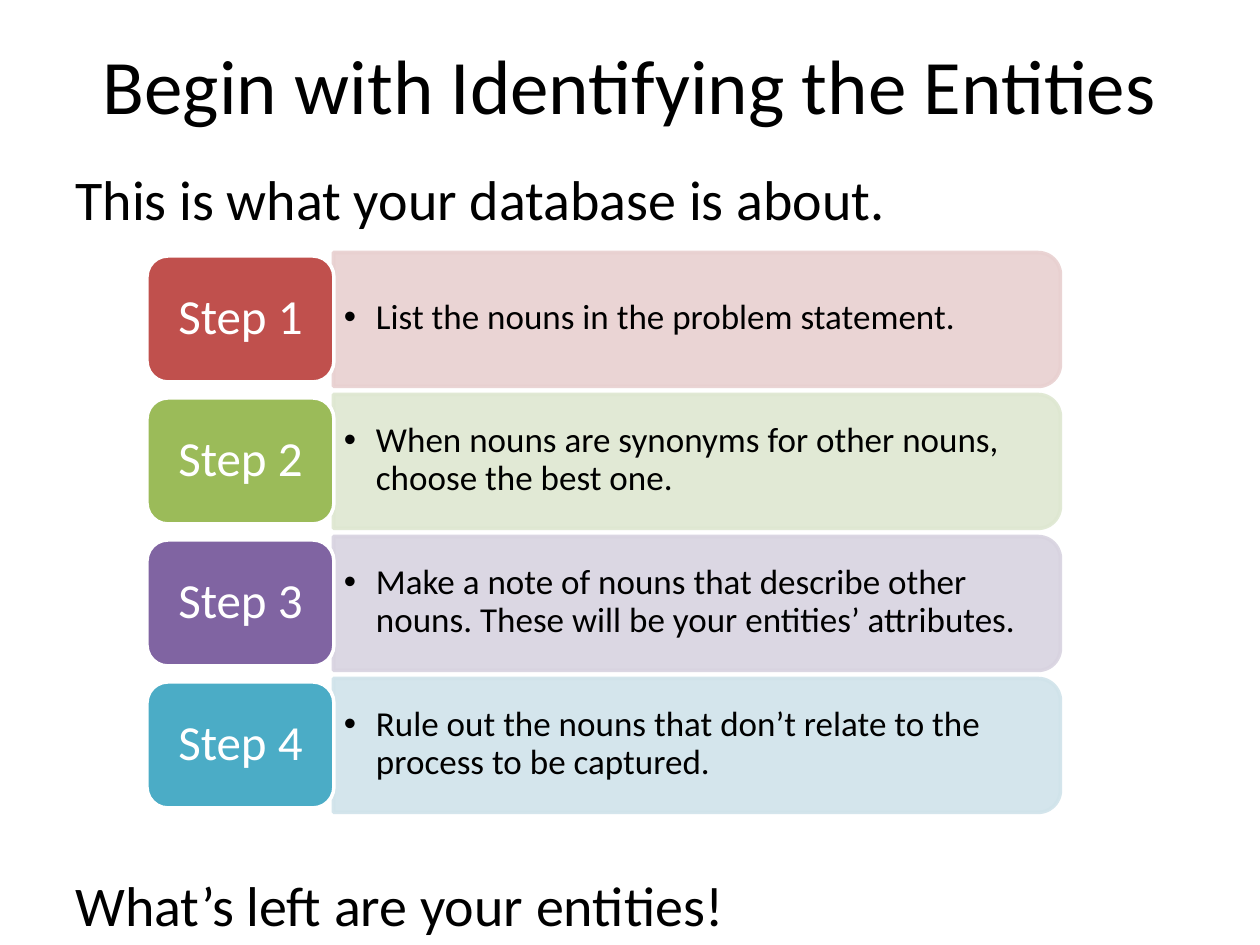
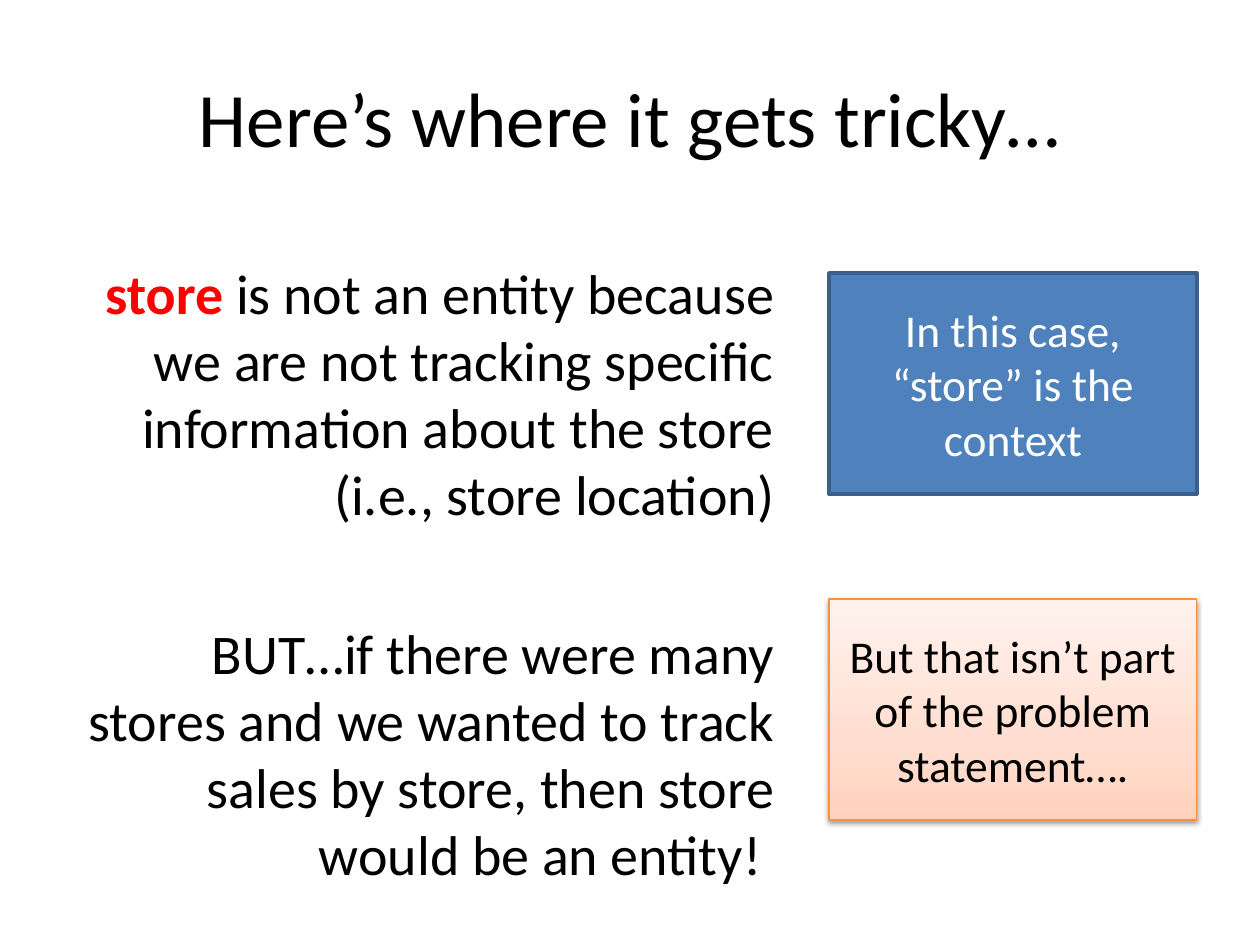
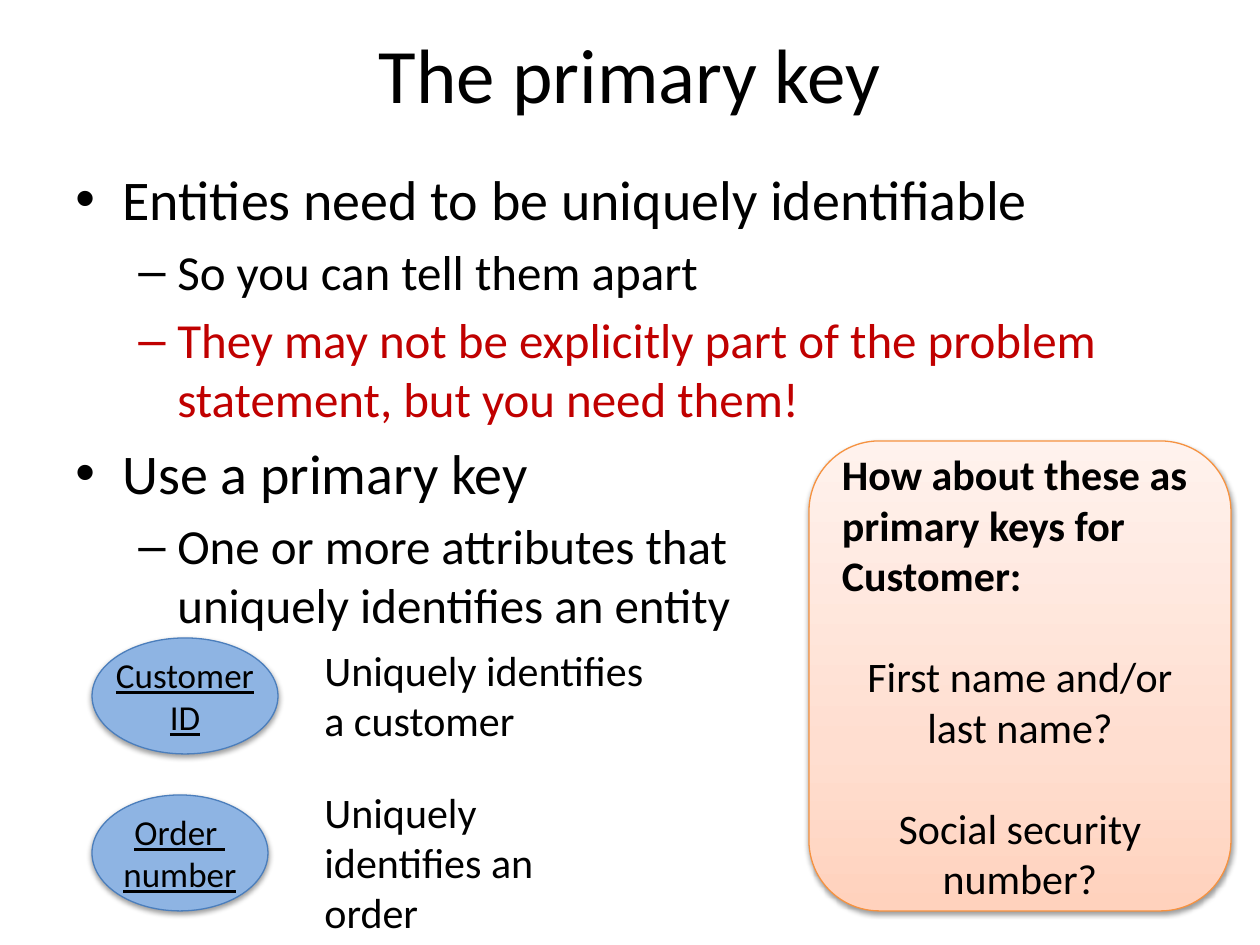
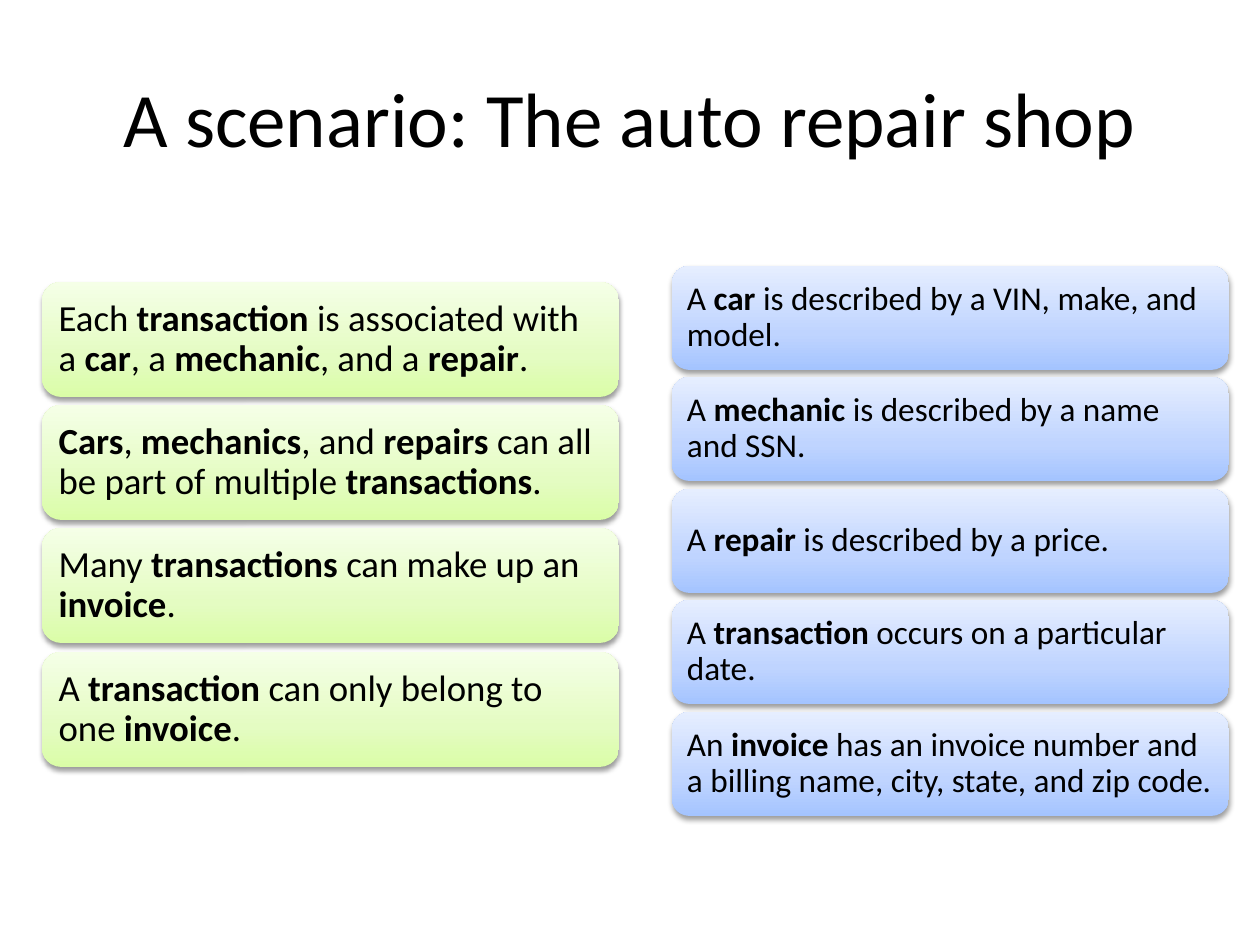
from dataclasses import dataclass

from pptx import Presentation
from pptx.dml.color import RGBColor
from pptx.enum.shapes import MSO_SHAPE
from pptx.enum.text import MSO_ANCHOR, PP_ALIGN
from pptx.oxml import parse_xml
from pptx.oxml.ns import nsdecls, qn
from pptx.util import Pt
from lxml.etree import SubElement

PX = 914400 // 126  # EMU in one px


@dataclass(frozen=True)
class Theme:
    font: str = "Calibri"
    # type sizes
    title: int = 44
    body: int = 32
    sub: int = 28
    callout: int = 26
    note: int = 24
    label: int = 20
    # colours
    ink: str = "000000"
    paper: str = "FFFFFF"
    red: str = "FF0000"
    warning: str = "C00000"
    blue: str = "4F81BD"
    blue_edge: str = "3A5F8C"
    key: str = "8EB4E3"
    key_edge: str = "4B7EBC"
    orange_edge: str = "F69240"
    # gradients, from bottom to top
    orange: tuple = ("FFD2BD", "FFDED0", "FFF2ED")
    green: tuple = ("DAFDA7", "E4FCC2", "F5FFE7")
    sky: tuple = ("A4C4FF", "BFD4FF", "E6EEFF")


theme = Theme()


def draw(slide, preset, left, top, width, height, fill=None, line=None, weight=2,
         opacity=100, shadow=False, anchor=MSO_ANCHOR.MIDDLE, inset=None, wrap=True):
    """Add a shape, or a plain text box when preset is None."""
    box = [v * PX for v in (left, top, width, height)]
    if preset is None:
        shape = slide.shapes.add_textbox(*box)
    else:
        shape = slide.shapes.add_shape(preset, *box)
        properties = shape.element.spPr
        shape.shadow.inherit = False
        if isinstance(fill, tuple):
            stops = "".join(f'<a:gs pos="{place}"><a:srgbClr val="{color}"/></a:gs>'
                            for place, color in zip((0, 35000, 100000), fill))
            properties.find(qn("a:prstGeom")).addnext(parse_xml(
                f'<a:gradFill {nsdecls("a")} rotWithShape="1"><a:gsLst>{stops}</a:gsLst>'
                '<a:lin ang="16200000" scaled="0"/></a:gradFill>'))
        else:
            shape.fill.solid()
            shape.fill.fore_color.rgb = RGBColor.from_string(fill)
        if line:
            shape.line.color.rgb = RGBColor.from_string(line)
            shape.line.width = Pt(weight)
        else:
            shape.line.fill.background()
        if opacity < 100:
            for color in properties.iter(qn("a:srgbClr")):
                SubElement(color, qn("a:alpha"), val=str(opacity * 1000))
        if shadow:
            properties.find(qn("a:effectLst")).append(parse_xml(
                f'<a:outerShdw {nsdecls("a")} blurRad="{Pt(3.1)}" dist="{Pt(1.6)}" '
                'dir="5400000" rotWithShape="0"><a:srgbClr val="000000">'
                '<a:alpha val="38000"/></a:srgbClr></a:outerShdw>'))
    frame = shape.text_frame
    frame.word_wrap = wrap
    frame.vertical_anchor = anchor
    if inset is not None:
        frame.margin_left = frame.margin_right = inset * PX
        frame.margin_top = frame.margin_bottom = inset * PX
    return shape


def write(shape, text, size, color=theme.ink, accent=None, bold=False, underline=None,
          align=PP_ALIGN.LEFT, before=None, spacing=None, bullet=None, indent=0, hang=0):
    """Add a paragraph; **marked** words are bold, in the accent colour if given."""
    frame = shape.text_frame
    paragraph = frame.paragraphs[0]
    if paragraph.runs:
        paragraph = frame.add_paragraph()
        if before is not None:
            paragraph.space_before = Pt(before)
    paragraph.alignment = align
    if spacing:
        paragraph.line_spacing = spacing
    if bullet:
        layout = paragraph._p.get_or_add_pPr()
        layout.set("marL", str(indent * PX))
        layout.set("indent", str(-hang * PX))
        SubElement(layout, qn("a:buFont"), typeface="Arial")
        SubElement(layout, qn("a:buChar"), char=bullet)
    for i, span in enumerate(text.split("**")):
        marked = i % 2 == 1
        for j, words in enumerate(span.split("\n")):
            if j:
                paragraph.add_line_break()
            if not words:
                continue
            run = paragraph.add_run()
            run.text = words
            run.font.name = theme.font
            run.font.size = Pt(size)
            run.font.bold = bold or marked
            run.font.underline = underline
            run.font.color.rgb = RGBColor.from_string(accent if marked and accent else color)


deck = Presentation()
deck.slide_width, deck.slide_height = 1260 * PX, 945 * PX

# Slides with their titles
slides = []
for title, top, height in [
    ("Begin with Identifying the Entities", 5, 158),
    ("Here’s where it gets tricky…", 38, 158),
    ("The primary key", 15, 116),
    ("A scenario: The auto repair shop", 38, 158),
]:
    slide = deck.slides.add_slide(deck.slide_layouts[6])
    write(draw(slide, None, 63, top, 1134, height), title, theme.title, align=PP_ALIGN.CENTER)
    slides.append(slide)
entities, tricky, primary_key, scenario = slides

# Entities: opening and closing lines
for sentence, top in [("This is what your database is about.", 158),
                      ("What’s left are your entities!", 864)]:
    write(draw(entities, None, 63, top, 1134, 80, anchor=MSO_ANCHOR.TOP), sentence, theme.body)

# Entities: four steps
steps = [
    ("List the nouns in the problem statement.", "C0504D", "E8D0D0"),
    ("When nouns are synonyms for other nouns, choose the best one.", "9BBB59", "DEE7D1"),
    ("Make a note of nouns that describe other nouns. "
     "These will be your entities’ attributes.", "8064A2", "D8D3E0"),
    ("Rule out the nouns that don’t relate to the process to be captured.",
     "4BACC6", "D0E3EA"),
]
for number, (instruction, strong, pale) in enumerate(steps, 1):
    drop = (number - 1) * 142
    band = draw(entities, MSO_SHAPE.ROUND_2_SAME_RECTANGLE, 630, drop - 44, 134, 727,
                fill=pale, line=pale, opacity=90)
    band.rotation = 90
    detail = draw(entities, None, 334, 258 + drop, 721, 121, inset=10)
    write(detail, instruction, theme.label, spacing=0.9, bullet="•", indent=32, hang=32)
    step = draw(entities, MSO_SHAPE.ROUNDED_RECTANGLE, 147, 256 + drop, 187, 126,
                fill=strong, line=theme.paper, inset=8)
    write(step, f"Step {number}", theme.sub, color=theme.paper, align=PP_ALIGN.CENTER,
          spacing=0.9)

# Tricky: argument on the left
argument = draw(tricky, None, 73, 252, 714, 624, anchor=MSO_ANCHOR.TOP)
write(argument, "**store **is not an entity because we are not tracking specific "
      "information about the store (i.e., store location)", theme.body,
      accent=theme.red, align=PP_ALIGN.RIGHT)
write(argument, "BUT…if there were many stores and we wanted to track sales by store, "
      "then store would be an entity! ", theme.body, align=PP_ALIGN.RIGHT, before=52)

# Tricky: remarks on the right
context = draw(tricky, MSO_SHAPE.RECTANGLE, 829, 273, 368, 221,
               fill=theme.blue, line=theme.blue_edge)
write(context, "In this case, “store” is the context", theme.callout, color=theme.paper,
      align=PP_ALIGN.CENTER)
objection = draw(tricky, MSO_SHAPE.RECTANGLE, 829, 599, 368, 221, fill=theme.orange,
                 line=theme.orange_edge, weight=0.75, shadow=True)
write(objection, "But that isn’t part of the problem statement….", theme.callout,
      align=PP_ALIGN.CENTER)

# Primary key: outline
outline = draw(primary_key, None, 63, 158, 1197, 452, anchor=MSO_ANCHOR.TOP)
point = dict(size=theme.body, bullet="•", indent=47, hang=47, before=6.4)
subpoint = dict(size=theme.sub, bullet="–", indent=102, hang=39, before=5.6)
write(outline, "Entities need to be uniquely identifiable", **point)
write(outline, "So you can tell them apart", **subpoint)
write(outline, "They may not be explicitly part of the problem statement, but you need them!",
      color=theme.warning, **subpoint)
write(outline, "Use a primary key", **point)
write(outline, "One or more attributes that \nuniquely identifies an entity", **subpoint)

# Primary key: sample keys and their meaning
for key, key_top, key_width, meaning, top, width, height in [
    ("Customer\nID", 638, 186, "Uniquely identifies a customer", 638, 352, 115),
    ("Order \nnumber", 795, 176, "Uniquely identifies an order", 780, 321, 165),
]:
    oval = draw(primary_key, MSO_SHAPE.OVAL, 92, key_top, key_width, 116, fill=theme.key,
                line=theme.key_edge, weight=0.75, shadow=True, wrap=False)
    write(oval, key, theme.label, underline=True, align=PP_ALIGN.CENTER)
    write(draw(primary_key, None, 312, top, width, height, anchor=MSO_ANCHOR.TOP),
          meaning, theme.note)

# Primary key: question panel
question = draw(primary_key, MSO_SHAPE.ROUNDED_RECTANGLE, 809, 441, 422, 470,
                fill=theme.orange, line=theme.orange_edge, weight=0.75, shadow=True)
write(question, "How about these as primary keys for Customer:", theme.note, bold=True)
for candidate in ("First name and/or last name?", "Social security number?"):
    write(question, candidate, theme.note, align=PP_ALIGN.CENTER, before=29)

# Scenario: relationships on the left, attributes on the right
relationships = [
    "Each **transaction **is associated with a **car**, a **mechanic**, and a **repair**.",
    "**Cars**, **mechanics**, and **repairs **can all be part of multiple **transactions**.",
    "Many **transactions **can make up an **invoice**.",
    "A **transaction **can only belong to one **invoice**.",
]
attributes = [
    "A **car** is described by a VIN, make, and model.",
    "A **mechanic** is described by a name and SSN.",
    "A **repair **is described by a price.",
    "A **transaction** occurs on a particular date.",
    "An **invoice** has an invoice number and a billing name, city, state, and zip code.",
]
for facts, left, first, last, width, height, gradient, size, inset in [
    (relationships, 42, 282, 652, 577, 115, theme.green, 21, 11),
    (attributes, 672, 266, 712, 557, 104, theme.sky, 19, 10),
]:
    for row, fact in enumerate(facts):
        top = first + (last - first) * row // (len(facts) - 1)
        card = draw(scenario, MSO_SHAPE.ROUNDED_RECTANGLE, left, top, width, height,
                    fill=gradient, shadow=True, inset=inset)
        write(card, fact, size, spacing=0.9)

deck.save("out.pptx")
